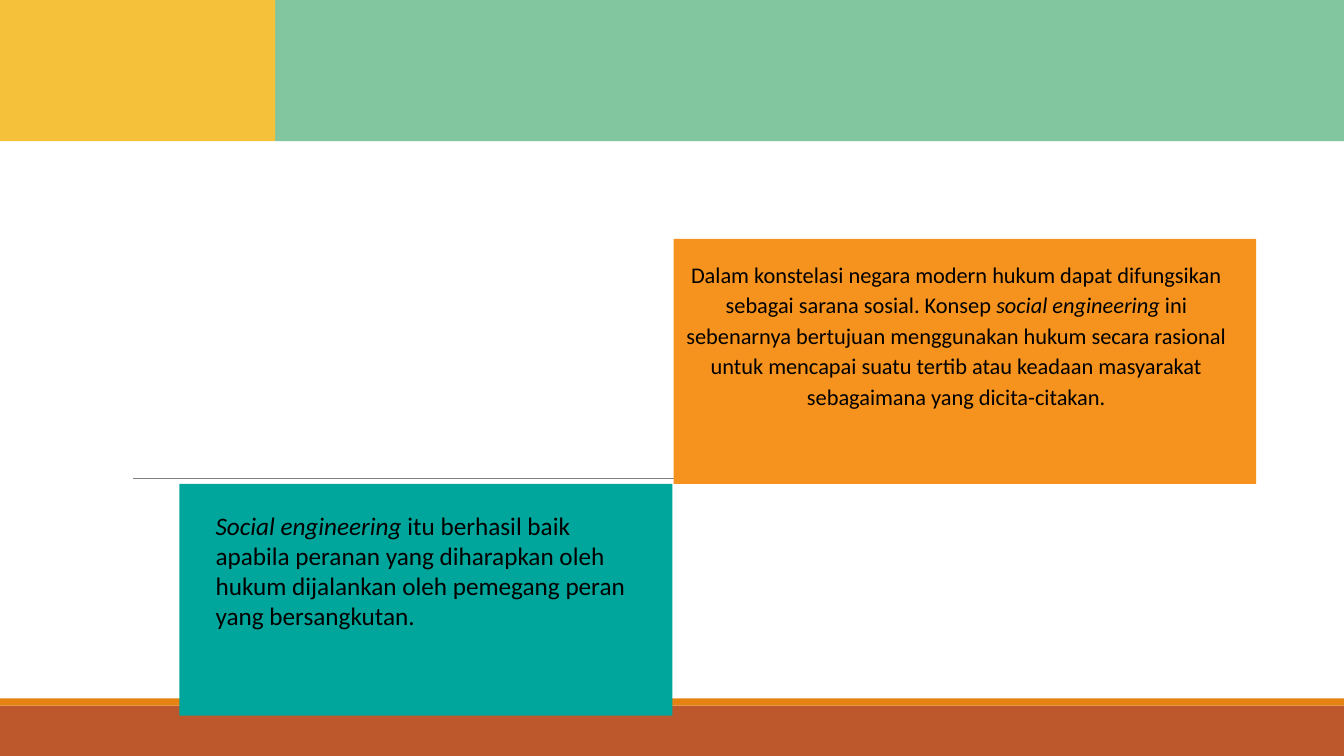
from pptx import Presentation
from pptx.dml.color import RGBColor
from pptx.enum.shapes import MSO_CONNECTOR, MSO_SHAPE
from pptx.enum.text import MSO_AUTO_SIZE, PP_ALIGN
from pptx.oxml.ns import qn
from pptx.util import Inches, Pt
from lxml.etree import SubElement

COLORS = {
    "rust": "BD582C", "amber": "E48312", "rule": "808080", "green": "82C69F",
    "yellow": "F5C13A", "teal": "00A69C", "orange": "F6921E", "text": "000000",
}
PAGE_WIDTH, PAGE_HEIGHT = 13.33, 7.5
FONT = "Calibri"


def add_block(page, box, color):
    block = page.shapes.add_shape(MSO_SHAPE.RECTANGLE, *map(Inches, box))
    block.shadow.inherit = False
    block.fill.solid()
    block.fill.fore_color.rgb = RGBColor.from_string(COLORS[color])
    block.line.fill.background()


def add_text(page, box, spans, size, align=PP_ALIGN.LEFT, spacing=1.0):
    frame = page.shapes.add_textbox(*map(Inches, box)).text_frame
    frame.word_wrap = True
    frame.auto_size = MSO_AUTO_SIZE.SHAPE_TO_FIT_TEXT
    para = frame.paragraphs[0]
    para.alignment = align
    para.line_spacing = spacing
    for text, italic in spans:
        span = para.add_run()
        span.text = text
        span.font.name = FONT
        span.font.size = Pt(size)
        span.font.italic = italic
        span.font.color.rgb = RGBColor.from_string(COLORS["text"])


def add_footer(page, box):
    left, top, width, height = box
    stripe = 0.07
    add_block(page, (left, top + stripe, width, height - stripe), "rust")
    add_block(page, (left, top, width, stripe), "amber")


def add_rule(page, left, top, width):
    rule = page.shapes.add_connector(
        MSO_CONNECTOR.STRAIGHT, Inches(left), Inches(top), Inches(left + width), Inches(top))
    rule.line.color.rgb = RGBColor.from_string(COLORS["rule"])
    rule.line.width = Pt(0.5)
    SubElement(rule._element.spPr, qn("a:effectLst"))


def add_header(page, box):
    left, top, width, height = box
    corner = 2.73
    add_block(page, (left + corner, top, width - corner, height), "green")
    add_block(page, (left, top, corner, height), "yellow")


def add_success_panel(page, box):
    left, top, width, height = box
    add_block(page, box, "teal")
    add_text(page, (left + 0.26, top + 0.21, width - 0.53, 1.31), [
        ("Social engineering ", True),
        ("itu berhasil baik apabila peranan yang diharapkan oleh hukum dijalankan "
         "oleh pemegang peran yang bersangkutan.", False),
    ], 18)


def add_concept_panel(page, box):
    left, top, width, height = box
    add_block(page, box, "orange")
    add_text(page, (left, top + 0.13, width - 0.17, 1.84), [
        ("Dalam konstelasi negara modern hukum dapat difungsikan sebagai sarana sosial. "
         "Konsep ", False),
        ("social engineering ", True),
        ("ini sebenarnya bertujuan menggunakan hukum secara rasional untuk mencapai "
         "suatu tertib atau keadaan masyarakat sebagaimana yang dicita-citakan.", False),
    ], 16, PP_ALIGN.CENTER, 1.14)


def main():
    deck = Presentation()
    deck.slide_width, deck.slide_height = Inches(PAGE_WIDTH), Inches(PAGE_HEIGHT)
    page = deck.slides.add_slide(deck.slide_layouts[6])
    add_footer(page, (0, 6.93, PAGE_WIDTH, 0.57))
    add_rule(page, 1.32, 4.75, 10.8)
    add_header(page, (0, 0, PAGE_WIDTH, 1.4))
    add_success_panel(page, (1.78, 4.8, 4.89, 2.3))
    add_concept_panel(page, (6.68, 2.37, 5.78, 2.43))
    deck.save("out.pptx")


if __name__ == "__main__":
    main()
